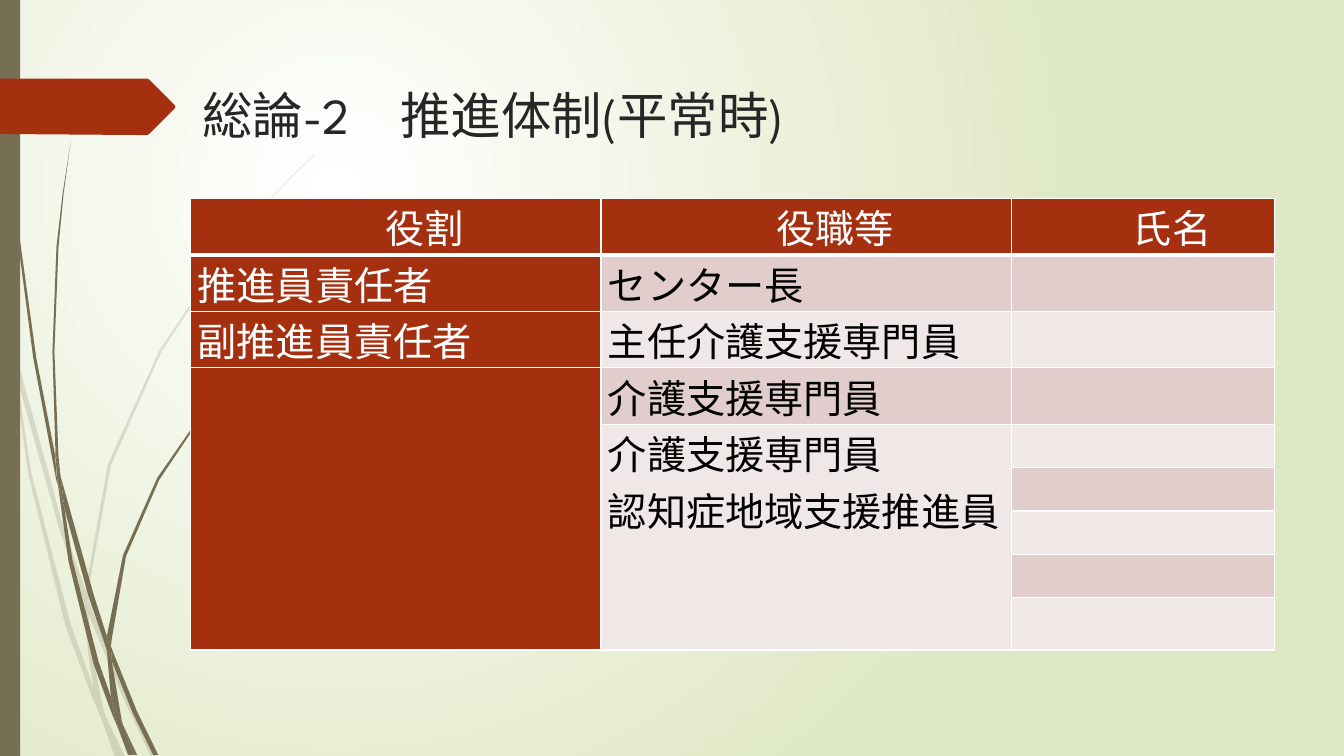
from dataclasses import dataclass

from lxml import etree
from pptx import Presentation
from pptx.dml.color import RGBColor
from pptx.enum.shapes import MSO_SHAPE
from pptx.enum.text import PP_ALIGN
from pptx.oxml.ns import qn
from pptx.util import Inches, Pt


@dataclass(frozen=True)
class Theme:
    font: str = "League Spartan"
    title_size: int = 36
    table_size: int = 28
    ink: str = "262626"
    black: str = "000000"
    white: str = "FFFFFF"
    red: str = "A53010"
    olive: str = "766F54"
    back: str = "DFE8C4"
    bands: tuple = ("E1CDCC", "F0E8E7")


# Grass blades: outlines in hundredths of an inch
PALE_BLADES = [
    [(11, 350), (9, 322), (0, 282), (0, 299), (10, 344)],
    [(58, 522), (84, 599), (85, 586), (62, 520), (14, 345), (17, 376)],
    [(92, 607), (88, 596), (88, 610), (123, 694), (150, 751), (155, 751), (127, 692)],
    [(119, 751), (124, 751), (105, 711)],
    [(93, 683), (70, 619), (31, 469), (17, 376), (11, 350), (28, 470), (65, 621),
     (92, 693), (101, 714), (99, 707)],
    [(84, 599), (87, 646), (93, 683), (96, 692), (105, 711), (103, 706), (91, 646),
     (88, 610), (88, 608)],
    [(88, 584), (110, 462), (160, 349), (229, 245), (268, 198), (290, 175), (312, 154),
     (312, 153), (289, 175), (268, 197), (228, 244), (158, 348), (107, 461), (85, 584),
     (85, 586), (88, 596)],
    [(101, 714), (114, 751), (119, 751)],
    [(88, 608), (88, 610), (88, 596), (85, 586), (84, 599)],
    [(96, 692), (93, 683), (99, 707), (101, 714), (119, 751), (105, 711)],
]
DARK_BLADES = [
    [(7, 110), (17, 233), (33, 355), (56, 477), (57, 481), (55, 457), (55, 453),
     (36, 355), (19, 232), (8, 109), (5, 48), (4, 0), (3, 0), (4, 48)],
    [(88, 592), (106, 645), (106, 631), (93, 590), (60, 472), (64, 505)],
    [(113, 649), (110, 641), (111, 656), (132, 708), (152, 749), (157, 749), (136, 706)],
    [(110, 691), (98, 657), (72, 556), (64, 505), (57, 477), (68, 557), (93, 659),
     (111, 708), (117, 722), (116, 717)],
    [(60, 472), (58, 453), (54, 349), (58, 245), (63, 193), (70, 141), (62, 193),
     (56, 245), (52, 349), (55, 449)],
    [(133, 749), (136, 749), (122, 719)],
    [(57, 477), (64, 505), (60, 472), (55, 449), (55, 453)],
    [(111, 633), (125, 552), (158, 476), (205, 406), (231, 374), (245, 359), (261, 344),
     (260, 344), (245, 358), (231, 373), (204, 405), (156, 474), (122, 551), (106, 631),
     (110, 641)],
    [(117, 722), (127, 749), (131, 749)],
    [(106, 645), (110, 691), (116, 706), (122, 719), (121, 716), (111, 656), (109, 651)],
    [(106, 645), (109, 651), (111, 656), (110, 641), (106, 631)],
    [(116, 706), (110, 691), (116, 717), (117, 722), (130, 749), (133, 749), (122, 719)],
]
TITLE_ARROW = [(173, 108), (148, 133), (146, 134), (136, 134), (0, 133), (0, 78),
               (146, 78), (148, 79), (173, 104), (174, 106)]

COLUMNS = [4.07, 4.07, 2.61]
ROWS = [0.56] * 4 + [0.43] * 4 + [0.52]
HEADINGS = ["役割", "役職等", "氏名"]
ROLES = ["推進員責任者", "副推進員責任者"]
POSITIONS = [["センター長"], ["主任介護支援専門員"], ["介護支援専門員"],
             ["介護支援専門員", "認知症地域支援推進員"]]


class SlideBuilder:
    def __init__(self, page, theme):
        self.page = page
        self.theme = theme

    def background(self):
        fill = self.page.background.fill
        fill.gradient()
        for stop, color, position in zip(fill.gradient_stops,
                                         (self.theme.white, self.theme.back), (0, 1)):
            stop.color.rgb = RGBColor.from_string(color)
            stop.position = position
        gradient = self.page._element.find(".//" + qn("a:gradFill"))
        gradient.remove(gradient.find(qn("a:lin")))
        circle = etree.SubElement(gradient, qn("a:path"))
        circle.set("path", "circle")
        center = etree.SubElement(circle, qn("a:fillToRect"))
        for side, share in zip("ltrb", (50, 50, 100, 100)):
            center.set(side, str(share * 1000))

    def paint(self, shape, color, opacity=100):
        shape.shadow.inherit = False
        shape.line.fill.background()
        shape.fill.solid()
        shape.fill.fore_color.rgb = RGBColor.from_string(color)
        if opacity < 100:
            value = shape._element.spPr.find(".//" + qn("a:srgbClr"))
            etree.SubElement(value, qn("a:alpha")).set("val", str(opacity * 1000))

    def outline(self, points, color, opacity=100):
        builder = self.page.shapes.build_freeform(*points[0], scale=Inches(0.01))
        builder.add_line_segments(points[1:], close=True)
        self.paint(builder.convert_to_shape(), color, opacity)

    def rectangle(self, left, top, width, height, color):
        shape = self.page.shapes.add_shape(
            MSO_SHAPE.RECTANGLE, Inches(left), Inches(top), Inches(width), Inches(height))
        self.paint(shape, color)

    def add_span(self, para, words, size, color):
        span = para.add_run()
        span.text = words
        span.font.name = self.theme.font
        span.font.size = Pt(size)
        span.font.color.rgb = RGBColor.from_string(color)

    def title(self, left, top, width, height, words):
        box = self.page.shapes.add_textbox(
            Inches(left), Inches(top), Inches(width), Inches(height))
        box.text_frame.word_wrap = True
        self.add_span(box.text_frame.paragraphs[0], words,
                      self.theme.title_size, self.theme.ink)

    def table(self, left, top, columns, rows):
        frame = self.page.shapes.add_table(
            len(rows), len(columns), Inches(left), Inches(top),
            Inches(sum(columns)), Inches(sum(rows)))
        table = frame.table
        table.horz_banding = False
        for column, width in zip(table.columns, columns):
            column.width = Inches(width)
        for row, height in zip(table.rows, rows):
            row.height = Inches(height)
        return table

    def style_cell(self, cell, color, top=1, bottom=1):
        properties = cell._tc.get_or_add_tcPr()
        for side, width in zip("LRTB", (1, 1, top, bottom)):
            border = etree.SubElement(properties, qn("a:ln" + side))
            border.set("w", str(Pt(width)))
            solid = etree.SubElement(border, qn("a:solidFill"))
            etree.SubElement(solid, qn("a:srgbClr")).set("val", self.theme.white)
        cell.fill.solid()
        cell.fill.fore_color.rgb = RGBColor.from_string(color)

    def fill_cell(self, cell, lines, color, heading=False):
        cell.margin_left = cell.margin_right = Inches(0.07)
        cell.margin_top = cell.margin_bottom = 0
        frame = cell.text_frame
        for index, line in enumerate(lines):
            para = frame.add_paragraph() if index else frame.paragraphs[0]
            if heading:
                para.alignment = PP_ALIGN.CENTER
                para._p.get_or_add_pPr().set("marL", str(Inches(0.58)))
            self.add_span(para, line, self.theme.table_size, color)


def main():
    deck = Presentation()
    deck.slide_width, deck.slide_height = Inches(13.33), Inches(7.5)
    theme = Theme()
    builder = SlideBuilder(deck.slides.add_slide(deck.slide_layouts[6]), theme)

    # Background and decoration
    builder.background()
    for blades, opacity in ((PALE_BLADES, 20), (DARK_BLADES, 100)):
        for blade in blades:
            builder.outline(blade, theme.olive, opacity)
    builder.rectangle(0, 0, 0.2, 7.5, theme.olive)
    builder.outline(TITLE_ARROW, theme.red)

    # Title
    builder.title(1.91, 0.79, 10.63, 1.64, "総論-2　推進体制(平常時)")

    # Table colours and borders
    table = builder.table(1.89, 1.97, COLUMNS, ROWS)
    for row in range(len(ROWS)):
        for column in range(len(COLUMNS)):
            red = row == 0 or column == 0
            builder.style_cell(table.cell(row, column),
                               theme.red if red else theme.bands[(row - 1) % 2],
                               top=3 if row == 1 else 1, bottom=3 if row == 0 else 1)
    table.cell(3, 0).merge(table.cell(8, 0))
    table.cell(4, 1).merge(table.cell(8, 1))

    # Table text
    for column, heading in enumerate(HEADINGS):
        builder.fill_cell(table.cell(0, column), [heading], theme.white, heading=True)
    for row, role in enumerate(ROLES, 1):
        builder.fill_cell(table.cell(row, 0), [role], theme.white)
    for row, lines in enumerate(POSITIONS, 1):
        builder.fill_cell(table.cell(row, 1), lines, theme.black)
    deck.save("out.pptx")


if __name__ == "__main__":
    main()
